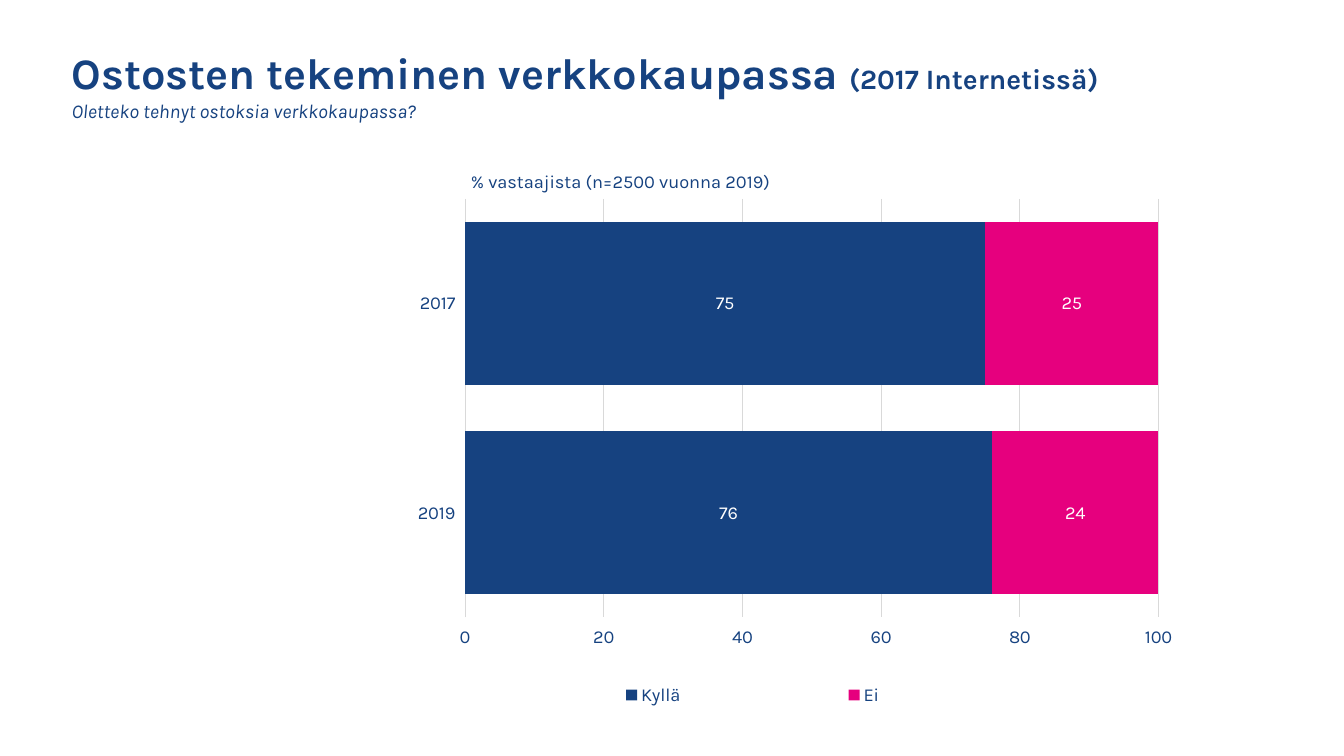
from pptx import Presentation, util as u
from pptx.chart.data import CategoryChartData
from pptx.dml.color import RGBColor
from pptx.enum import chart as ch, text
from pptx.oxml import parse_xml
from pptx.oxml.ns import nsdecls

NAVY, MAGENTA, GREY, WHITE = "164280", "E6007E", "D9D9D9", "FFFFFF"


def color(value):
    return RGBColor.from_string(value)


class SurveySlide:
    font_name = "Karla"
    small = 13

    def __init__(self, deck):
        self.slide = deck.slides.add_slide(deck.slide_layouts[5])

    def style(self, font, size, ink=NAVY, bold=False, italic=False):
        font.name, font.size = self.font_name, u.Pt(size)
        font.bold, font.italic = bold, italic
        font.color.rgb = color(ink)

    def frame(self, holder, left_inset=0.13, wrap=True):
        frame = holder.text_frame
        frame.word_wrap = wrap
        frame.auto_size = text.MSO_AUTO_SIZE.NONE
        frame.vertical_anchor = text.MSO_ANCHOR.TOP
        frame.margin_left, frame.margin_right = u.Inches(left_inset), u.Inches(0.13)
        frame.margin_top = frame.margin_bottom = u.Inches(0.07)
        paragraph = frame.paragraphs[0]
        paragraph.alignment = text.PP_ALIGN.LEFT
        return paragraph

    def title(self, parts, left, top, width, height):
        heading = self.slide.shapes.title
        heading.left, heading.top = u.Inches(left), u.Inches(top)
        heading.width, heading.height = u.Inches(width), u.Inches(height)
        paragraph = self.frame(heading, wrap=False)
        for words, size in parts:
            run = paragraph.add_run()
            run.text = words
            self.style(run.font, size, bold=True)

    def label(self, words, size, left, top, width, height, left_inset=0.13, italic=False):
        box = self.slide.shapes.add_textbox(*map(u.Inches, (left, top, width, height)))
        paragraph = self.frame(box, left_inset)
        paragraph.text = words
        self.style(paragraph.font, size, italic=italic)

    def layout(self, x, y, w, h, inner=False):
        target = '<c:layoutTarget val="inner"/>' if inner else ""
        places = "".join(f'<c:{side} val="{share}"/>'
                         for side, share in zip("xywh", (x, y, w, h)))
        return parse_xml(
            f'<c:layout {nsdecls("c")}><c:manualLayout>{target}<c:xMode val="edge"/>'
            f'<c:yMode val="edge"/>{places}</c:manualLayout></c:layout>')

    def stacked_bars(self, years, answers, left, top, width, height):
        data = CategoryChartData()
        data.categories = years
        for name, shares, _ in answers:
            data.add_series(name, shares)
        chart = self.slide.shapes.add_chart(
            ch.XL_CHART_TYPE.BAR_STACKED, *map(u.Inches, (left, top, width, height)), data).chart
        self.style(chart.font, self.small)
        chart.has_title = False

        plot = chart.plots[0]
        plot.gap_width, plot.overlap, plot.vary_by_categories = 28, 100, False
        for series, (_, _, fill) in zip(plot.series, answers):
            series.format.fill.solid()
            series.format.fill.fore_color.rgb = color(fill)
            labels = series.data_labels
            labels.show_value = True
            self.style(labels.font, self.small, WHITE)

        year_axis, share_axis = chart.category_axis, chart.value_axis
        for axis in (year_axis, share_axis):
            axis.major_tick_mark = axis.minor_tick_mark = ch.XL_TICK_MARK.NONE
        year_axis.reverse_order = True
        year_axis.tick_label_position = ch.XL_TICK_LABEL_POSITION.LOW
        share_axis._element.find("{*}crosses").set("val", "max")
        share_axis.tick_label_position = ch.XL_TICK_LABEL_POSITION.HIGH
        share_axis.minimum_scale, share_axis.maximum_scale = 0, 100
        share_axis.major_unit = 20
        share_axis.format.line.fill.background()
        for line, weight in ((year_axis.format.line, 0.25),
                             (share_axis.major_gridlines.format.line, 0.75)):
            line.color.rgb, line.width = color(GREY), u.Pt(weight)

        chart.has_legend = True
        legend = chart.legend
        legend.position = ch.XL_LEGEND_POSITION.BOTTOM
        legend.include_in_layout = False
        self.style(legend.font, self.small)
        legend_xml = legend._element
        for old in legend_xml.findall("{*}layout"):
            legend_xml.remove(old)
        legend_xml.find("{*}legendPos").addnext(self.layout(0.345, 0.88, 0.43, 0.08))
        area = plot._element.getparent()
        for old in area.findall("{*}layout"):
            area.remove(old)
        area.insert(0, self.layout(0.346, 0.09, 0.516, 0.7, inner=True))


def main():
    deck = Presentation()
    deck.slide_width, deck.slide_height = u.Inches(13.33), u.Inches(7.5)
    page = SurveySlide(deck)
    page.stacked_bars(("2017", "2019"),
                      (("Kyllä", (75, 76), NAVY), ("Ei", (25, 24), MAGENTA)),
                      0, 1.44, 13.33, 5.93)
    page.title((("Ostosten tekeminen verkkokaupassa ", 31), ("(2017 Internetissä)", 20)),
               0.58, 0.39, 10.51, 0.66)
    page.label("Oletteko tehnyt ostoksia verkkokaupassa?", 14,
               0.58, 0.91, 10.76, 0.37, italic=True)
    page.label("% vastaajista (n=2500 vuonna 2019)", page.small,
               4.62, 1.62, 8.61, 0.35, left_inset=0.05)
    deck.save("out.pptx")


if __name__ == "__main__":
    main()
